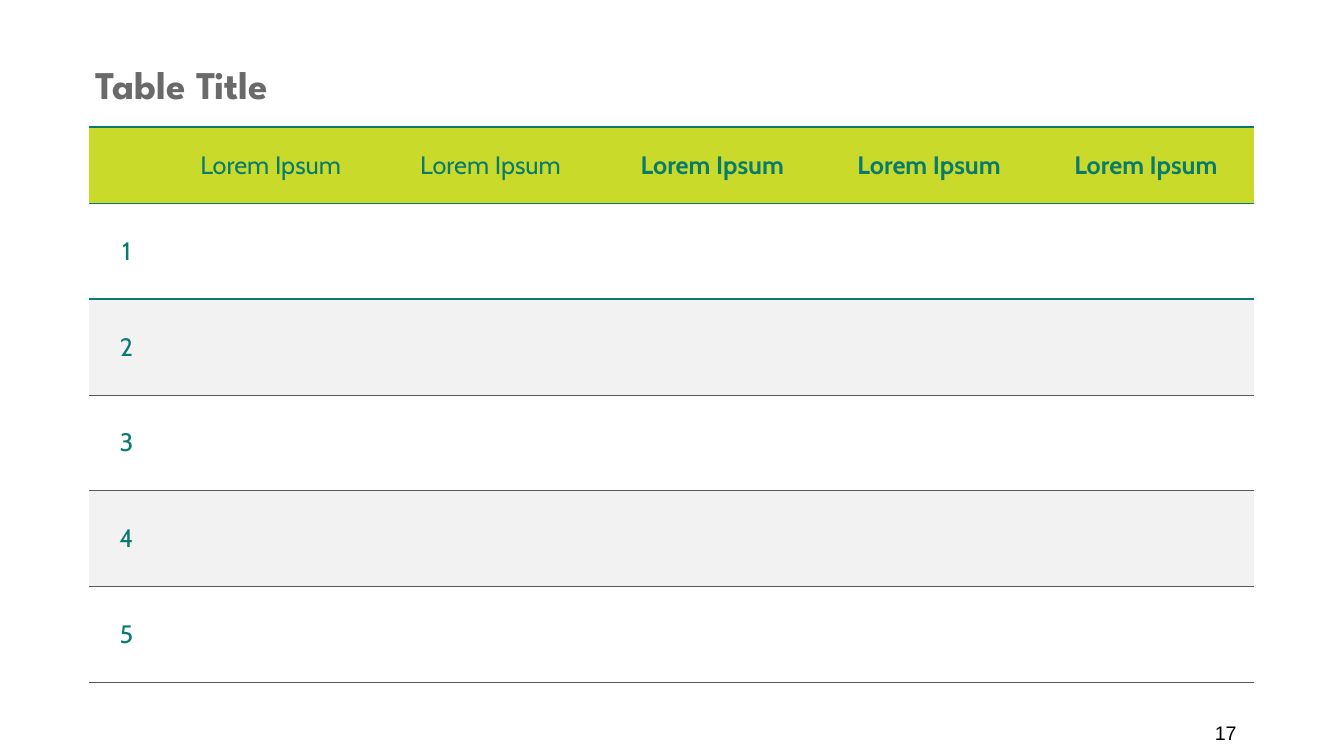
"""Build a slide with a titled, banded table."""
from dataclasses import dataclass

from lxml.etree import SubElement
from pptx import Presentation
from pptx.dml.color import RGBColor
from pptx.enum.text import MSO_ANCHOR, MSO_AUTO_SIZE, PP_ALIGN
from pptx.oxml.ns import qn
from pptx.util import Inches, Pt

TEAL, LIME, GREY = "087B6D", "CADA2A", "696A69"
WHITE, PALE, DARK, BLACK = "FFFFFF", "F2F2F2", "595959", "000000"
WIDTHS = (0.75, 2.11, 2.25, 2.15, 2.15, 2.15)


@dataclass(frozen=True)
class Rule:
    """A horizontal line between rows."""
    color: str
    width: float


@dataclass(frozen=True)
class Row:
    """One table row, with the lines above and below it."""
    texts: tuple[str, ...]
    height: float
    fill: str
    top: Rule
    base: Rule
    bold: tuple[int, ...] = ()


@dataclass(frozen=True)
class Label:
    """Text with its box and font."""
    text: str
    box: tuple[float, float, float, float]
    font: str
    size: float
    color: str
    bold: bool = False


THICK, THIN = Rule(TEAL, 1.5), Rule(DARK, 0.75)
HEAD = Row(("",) + ("Lorem Ipsum",) * 5, 0.76, LIME, THICK, THICK, (3, 4, 5))
BODY = [
    Row((str(n),), 0.95, WHITE if n % 2 else PALE,
        THICK if n <= 2 else THIN, THICK if n == 1 else THIN)
    for n in range(1, 6)
]
TITLE = Label("Table Title", (0.85, 0.55, 6.93, 0.57),
              "League Spartan", 28, GREY, True)
PAGE = Label("17", (11.95, 7.1, 0.51, 0.4), "Arial", 14, BLACK)


def paint(color: str) -> RGBColor:
    """Turn a hex string into a colour."""
    return RGBColor.from_string(color)


def style(para, font: str, size: float, color: str, bold: bool) -> None:
    """Set the font of a paragraph."""
    para.font.name = font
    para.font.size = Pt(size)
    para.font.bold = bold
    para.font.color.rgb = paint(color)


def place(shape, label: Label) -> None:
    """Move a text shape and fill it with a label."""
    shape.left, shape.top, shape.width, shape.height = map(Inches, label.box)
    frame = shape.text_frame
    frame.text = label.text
    frame.word_wrap = True
    frame.vertical_anchor = MSO_ANCHOR.TOP
    para = frame.paragraphs[0]
    para.alignment = PP_ALIGN.LEFT
    style(para, label.font, label.size, label.color, label.bold)


def edge(cell, row: Row) -> None:
    """Draw the lines above and below a cell and clear its sides."""
    props = cell._tc.get_or_add_tcPr()
    sides = (("L", None), ("R", None), ("T", row.top), ("B", row.base))
    for side, rule in sides:
        line = SubElement(props, qn(f"a:ln{side}"))
        if rule is None:
            SubElement(line, qn("a:noFill"))
            continue
        line.set("w", str(Pt(rule.width)))
        fill = SubElement(line, qn("a:solidFill"))
        SubElement(fill, qn("a:srgbClr"), val=rule.color)


def draw(slide, rows: list[Row]) -> None:
    """Add the table and format its cells."""
    height = sum(row.height for row in rows)
    frame = slide.shapes.add_table(
        len(rows), len(WIDTHS), Inches(0.88), Inches(1.26),
        Inches(sum(WIDTHS)), Inches(height))
    table = frame.table
    table.first_row = table.horz_banding = False
    for col, width in zip(table.columns, WIDTHS):
        col.width = Inches(width)
    for line, row in zip(table.rows, rows):
        line.height = Inches(row.height)
        for i, cell in enumerate(line.cells):
            edge(cell, row)
            cell.fill.solid()
            cell.fill.fore_color.rgb = paint(row.fill)
            cell.vertical_anchor = MSO_ANCHOR.MIDDLE
            if i < len(row.texts) and row.texts[i]:
                cell.text = row.texts[i]
                para = cell.text_frame.paragraphs[0]
                para.alignment = PP_ALIGN.CENTER
                style(para, "Cabin", 18, TEAL, i in row.bold)


def main() -> None:
    """Build and save the slide."""
    deck = Presentation()
    deck.slide_width, deck.slide_height = Inches(13.33), Inches(7.5)
    slide = deck.slides.add_slide(deck.slide_layouts[5])
    draw(slide, [HEAD, *BODY])
    title = slide.shapes.title
    place(title, TITLE)
    title.text_frame.auto_size = MSO_AUTO_SIZE.SHAPE_TO_FIT_TEXT
    place(slide.shapes.add_textbox(*map(Inches, PAGE.box)), PAGE)
    deck.save("out.pptx")


if __name__ == "__main__":
    main()
